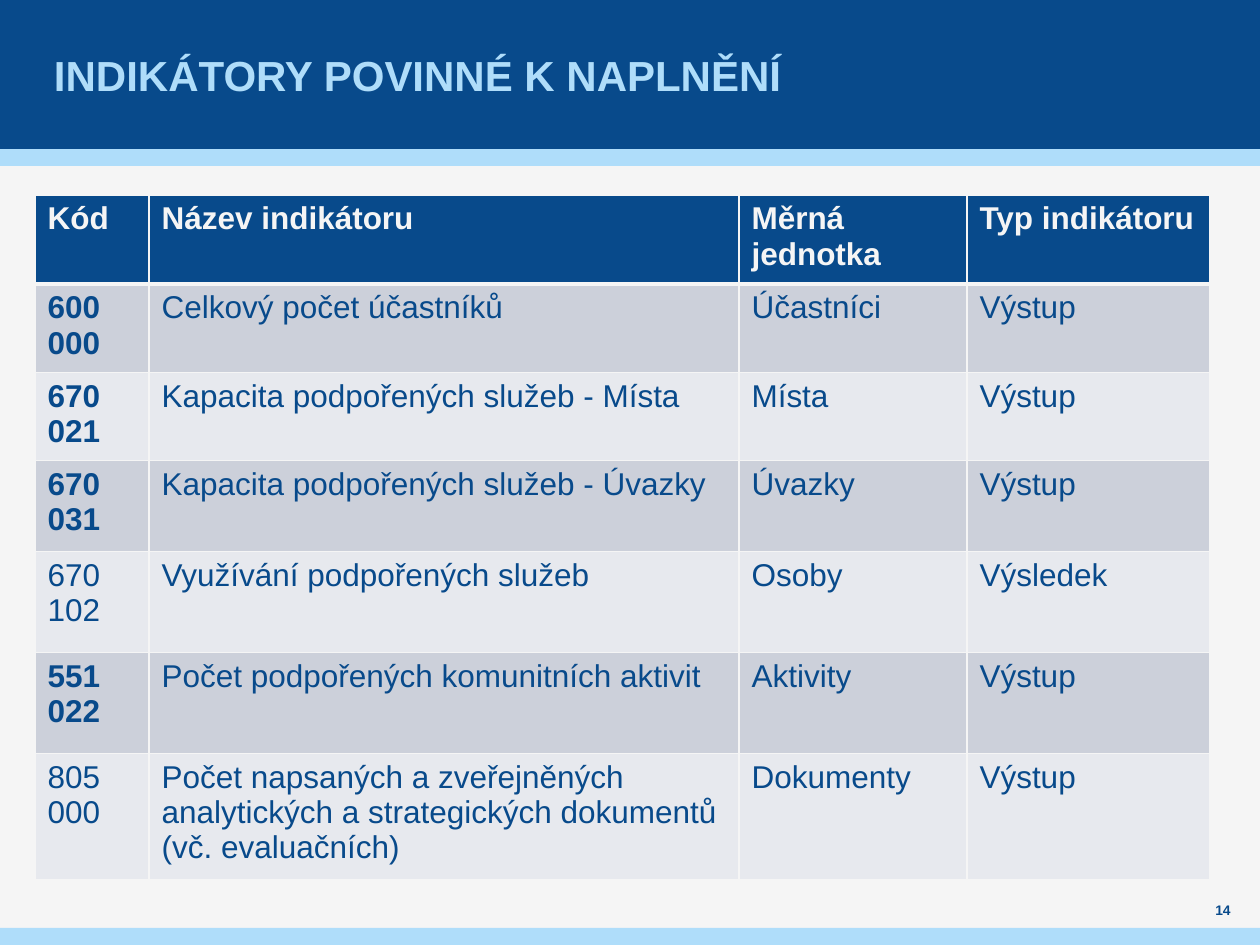
from dataclasses import dataclass

from lxml.etree import SubElement
from pptx import Presentation
from pptx.dml.color import RGBColor
from pptx.enum.shapes import MSO_SHAPE
from pptx.enum.text import MSO_ANCHOR, PP_ALIGN
from pptx.oxml.ns import qn
from pptx.util import Emu, Pt

PX = 914400 // 126


@dataclass(frozen=True)
class Theme:
    navy: str = "084A8B"
    sky: str = "AFDDFA"
    paper: str = "F5F5F5"
    bands: tuple = ("CCD0DA", "E7E9EE")
    font: str = "Arial"
    title_size: float = 24
    table_size: float = 18
    number_size: float = 7.9


THEME = Theme()

TITLE = "INDIKÁTORY POVINNÉ K NAPLNĚNÍ"
PAGE_NUMBER = "14"
HEADER = ("Kód", "Název indikátoru", "Měrná jednotka", "Typ indikátoru")
INDICATORS = [
    ("600 000", "Celkový počet účastníků", "Účastníci", "Výstup"),
    ("670 021", "Kapacita podpořených služeb - Místa", "Místa", "Výstup"),
    ("670 031", "Kapacita podpořených služeb - Úvazky", "Úvazky", "Výstup"),
    ("670 102", "Využívání podpořených služeb", "Osoby", "Výsledek"),
    ("551 022", "Počet podpořených komunitních aktivit", "Aktivity", "Výstup"),
    ("805 000", "Počet napsaných a zveřejněných analytických a strategických "
                "dokumentů (vč. evaluačních)", "Dokumenty", "Výstup"),
]
BOLD_CODES = {"600 000", "670 021", "670 031", "551 022"}

# left, top, width, height in px
BARS = [
    ((0, 149, 1260, 17), THEME.sky),
    ((0, 0, 1260, 149), THEME.navy),
    ((0, 928, 1260, 17), THEME.sky),
]
TITLE_BOX = (49, 0, 1160, 149)
NUMBER_BOX = (1191, 898, 64, 25)
TABLE_ORIGIN = (35, 195)
COLUMN_WIDTHS = (114, 590, 228, 243)
ROW_HEIGHTS = (89, 87, 83, 91, 101, 101, 118)


def emu(lengths):
    return [Emu(length * PX) for length in lengths]


def color(value):
    return RGBColor.from_string(value)


def add_run(paragraph, text, size, text_color, bold):
    run = paragraph.add_run()
    run.text = text
    run.font.name = THEME.font
    run.font.size = Pt(size)
    run.font.bold = bold
    run.font.color.rgb = color(text_color)


def add_bar(slide, box, fill):
    bar = slide.shapes.add_shape(MSO_SHAPE.RECTANGLE, *emu(box))
    bar.shadow.inherit = False
    bar.fill.solid()
    bar.fill.fore_color.rgb = color(fill)
    bar.line.fill.background()


def add_label(slide, box, text, size, text_color, side_inset, align):
    frame = slide.shapes.add_textbox(*emu(box)).text_frame
    frame.word_wrap = True
    frame.vertical_anchor = MSO_ANCHOR.MIDDLE
    frame.margin_left = frame.margin_right = Emu(side_inset * PX)
    frame.margin_top = frame.margin_bottom = 0
    paragraph = frame.paragraphs[0]
    paragraph.alignment = align
    add_run(paragraph, text, size, text_color, True)


def set_borders(cell, widths):
    """Draw the left, right, top and bottom borders, widths in points."""
    properties = cell._tc.get_or_add_tcPr()
    for side, width in zip("LRTB", widths):
        line = SubElement(properties, qn(f"a:ln{side}"), w=str(Pt(width)))
        fill = SubElement(line, qn("a:solidFill"))
        SubElement(fill, qn("a:srgbClr"), val=THEME.paper)


def add_indicator_table(slide):
    rows = [HEADER, *INDICATORS]
    box = (*TABLE_ORIGIN, sum(COLUMN_WIDTHS), sum(ROW_HEIGHTS))
    table = slide.shapes.add_table(len(rows), len(HEADER), *emu(box)).table
    for column, width in zip(table.columns, emu(COLUMN_WIDTHS)):
        column.width = width
    for row, height in zip(table.rows, emu(ROW_HEIGHTS)):
        row.height = height

    for r, values in enumerate(rows):
        is_header = r == 0
        fill = THEME.navy if is_header else THEME.bands[(r - 1) % 2]
        text_color = THEME.paper if is_header else THEME.navy
        for c, text in enumerate(values):
            cell = table.cell(r, c)
            set_borders(cell, (1, 1, 3 if r == 1 else 1, 3 if is_header else 1))
            cell.fill.solid()
            cell.fill.fore_color.rgb = color(fill)
            add_run(cell.text_frame.paragraphs[0], text, THEME.table_size,
                    text_color, is_header or text in BOLD_CODES)


def main():
    presentation = Presentation()
    presentation.slide_width, presentation.slide_height = emu((1260, 945))
    slide = presentation.slides.add_slide(presentation.slide_layouts[6])
    slide.background.fill.solid()
    slide.background.fill.fore_color.rgb = color(THEME.paper)

    for box, fill in BARS:
        add_bar(slide, box, fill)
    add_label(slide, TITLE_BOX, TITLE, THEME.title_size, THEME.sky, 5, PP_ALIGN.LEFT)
    add_label(slide, NUMBER_BOX, PAGE_NUMBER, THEME.number_size, THEME.navy, 0,
              PP_ALIGN.CENTER)
    add_indicator_table(slide)
    presentation.save("out.pptx")


if __name__ == "__main__":
    main()
